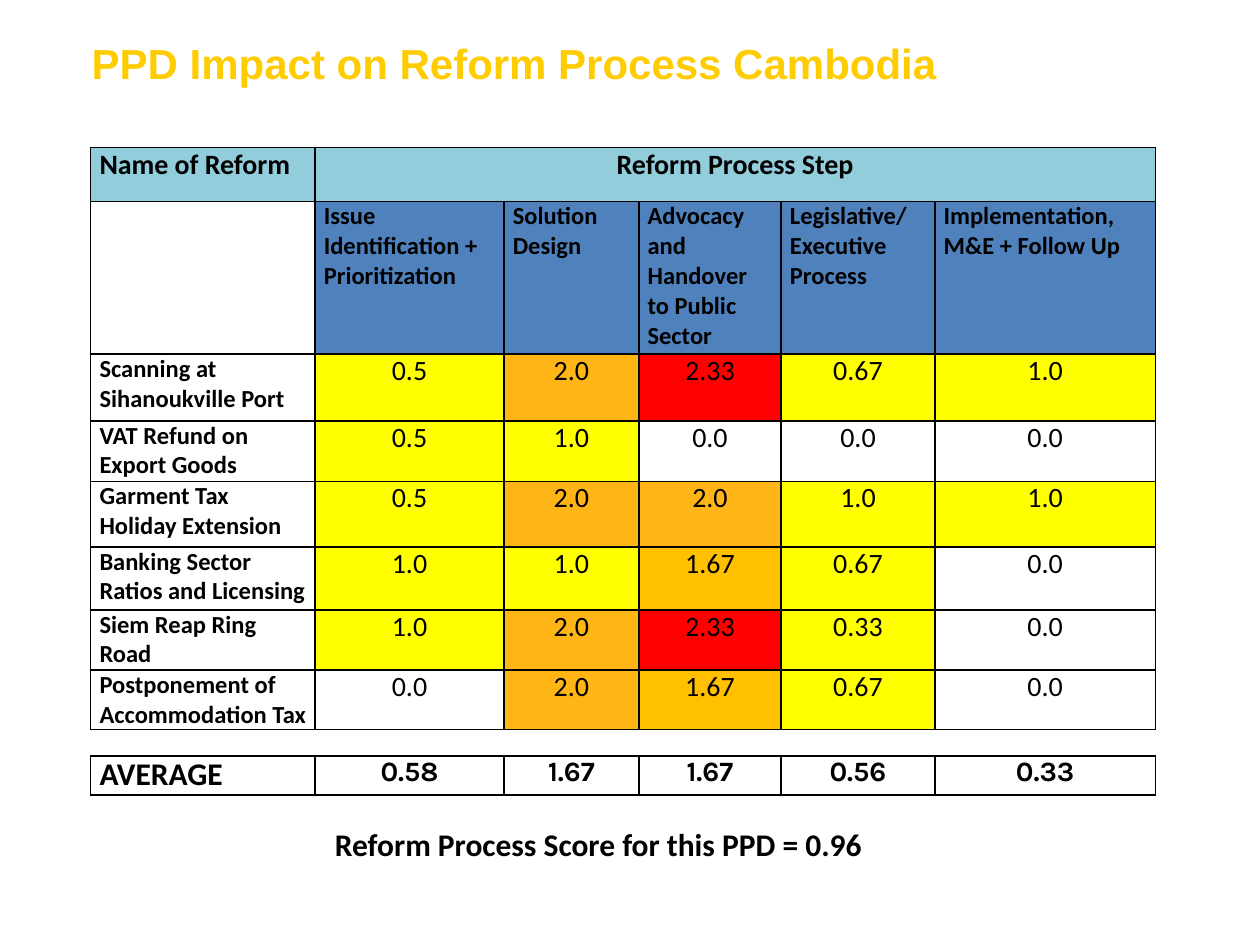
from lxml.etree import SubElement
from pptx import Presentation
from pptx.dml.color import RGBColor
from pptx.enum.text import MSO_AUTO_SIZE, PP_ALIGN
from pptx.oxml.ns import qn
from pptx.util import Inches, Pt

BLACK = RGBColor(0x00, 0x00, 0x00)
GOLD = RGBColor(0xFF, 0xCC, 0x00)
LIGHT_BLUE = RGBColor(0x92, 0xCD, 0xDC)
BLUE = RGBColor(0x4F, 0x81, 0xBD)
YELLOW = RGBColor(0xFF, 0xFF, 0x00)
AMBER = RGBColor(0xFF, 0xC0, 0x00)
ORANGE = RGBColor(0xFE, 0xB5, 0x15)
RED = RGBColor(0xFF, 0x00, 0x00)

TITLE = "PPD Impact on Reform Process Cambodia"
SCORE = "Reform Process Score for this PPD = 0.96"
STEPS = [
    ("Issue Identification + Prioritization", PP_ALIGN.LEFT),
    ("Solution Design", PP_ALIGN.JUSTIFY),
    ("Advocacy and Handover to Public Sector", PP_ALIGN.LEFT),
    ("Legislative/ Executive Process", PP_ALIGN.JUSTIFY),
    ("Implementation, M&E + Follow Up", PP_ALIGN.JUSTIFY),
]
REFORMS = [
    ("Scanning at Sihanoukville Port", ["0.5", "2.0", "2.33", "0.67", "1.0"]),
    ("VAT Refund on Export Goods", ["0.5", "1.0", "0.0", "0.0", "0.0"]),
    ("Garment Tax Holiday Extension", ["0.5", "2.0", "2.0", "1.0", "1.0"]),
    ("Banking Sector Ratios and Licensing", ["1.0", "1.0", "1.67", "0.67", "0.0"]),
    ("Siem Reap Ring Road", ["1.0", "2.0", "2.33", "0.33", "0.0"]),
    ("Postponement of Accommodation Tax", ["0.0", "2.0", "1.67", "0.67", "0.0"]),
]
AVERAGES = ["0.58", "1.67", "1.67", "0.56", "0.33"]
COLUMN_WIDTHS = [1.78, 1.5, 1.07, 1.13, 1.22, 1.75]
ROW_HEIGHTS = [0.43, 1.21, 0.53, 0.48, 0.52, 0.5, 0.48, 0.47, 0.21, 0.31]
FIRST_REFORM_ROW = 2
SPACER_ROW = FIRST_REFORM_ROW + len(REFORMS)
AVERAGE_ROW = SPACER_ROW + 1
SCORE_FILLS = [(0, None), (1, YELLOW), (1.67, AMBER), (2, ORANGE), (3, RED)]


def write_text(frame, text, size=16, bold=True, font="Calibri", color=BLACK, align=PP_ALIGN.LEFT):
    frame.word_wrap = True
    paragraph = frame.paragraphs[0]
    paragraph.alignment = align
    run = paragraph.add_run()
    run.text = text
    run.font.size = Pt(size)
    run.font.bold = bold
    run.font.name = font
    run.font.color.rgb = color


def add_text_box(slide, left, top, width, height, text, **text_format):
    box = slide.shapes.add_textbox(Inches(left), Inches(top), Inches(width), Inches(height))
    write_text(box.text_frame, text, **text_format)
    box.text_frame.auto_size = MSO_AUTO_SIZE.SHAPE_TO_FIT_TEXT


def add_borders(cell, visible_sides):
    properties = cell._tc.get_or_add_tcPr()
    for side in "LRTB":
        line = SubElement(properties, qn(f"a:ln{side}"), w=str(Pt(1)))
        if side in visible_sides:
            fill = SubElement(line, qn("a:solidFill"))
            SubElement(fill, qn("a:srgbClr"), val=str(BLACK))
        else:
            SubElement(line, qn("a:noFill"))


def paint(cell, color):
    if color is None:
        cell.fill.background()
    else:
        cell.fill.solid()
        cell.fill.fore_color.rgb = color


def score_fill(score):
    return next(color for limit, color in SCORE_FILLS if float(score) <= limit)


def add_reform_table(slide):
    frame = slide.shapes.add_table(
        len(ROW_HEIGHTS), len(COLUMN_WIDTHS), Inches(0.72), Inches(1.17),
        Inches(sum(COLUMN_WIDTHS)), Inches(sum(ROW_HEIGHTS)))
    table = frame.table
    table.first_row = False
    table.horz_banding = False
    for column, width in zip(table.columns, COLUMN_WIDTHS):
        column.width = Inches(width)
    for row_index, height in enumerate(ROW_HEIGHTS):
        row = table.rows[row_index]
        row.height = Inches(height)
        for cell in row.cells:
            cell.margin_left = cell.margin_right = Inches(0.07)
            cell.margin_top = cell.margin_bottom = 0
            add_borders(cell, "TB" if row_index == SPACER_ROW else "LRTB")
            paint(cell, None)
            if row_index == SPACER_ROW:
                cell.text_frame.paragraphs[0]._p.get_or_add_endParaRPr().set("sz", "1000")

    def fill_cell(row, column, text, color=None, **text_format):
        cell = table.cell(row, column)
        write_text(cell.text_frame, text, **text_format)
        paint(cell, color)

    last_column = len(COLUMN_WIDTHS) - 1
    table.cell(0, 1).merge(table.cell(0, last_column))
    table.cell(SPACER_ROW, 0).merge(table.cell(SPACER_ROW, last_column))

    fill_cell(0, 0, "Name of Reform", LIGHT_BLUE)
    fill_cell(0, 1, "Reform Process Step", LIGHT_BLUE, align=PP_ALIGN.CENTER)
    for column, (step, align) in enumerate(STEPS, 1):
        fill_cell(1, column, step, BLUE, size=14, align=align)
    for row, (reform, scores) in enumerate(REFORMS, FIRST_REFORM_ROW):
        fill_cell(row, 0, reform, size=14)
        for column, score in enumerate(scores, 1):
            fill_cell(row, column, score, score_fill(score), bold=False, align=PP_ALIGN.CENTER)
    fill_cell(AVERAGE_ROW, 0, "AVERAGE", size=18, align=PP_ALIGN.JUSTIFY)
    for column, average in enumerate(AVERAGES, 1):
        fill_cell(AVERAGE_ROW, column, average, font="Karla", align=PP_ALIGN.CENTER)


def main():
    presentation = Presentation()
    presentation.slide_width = Inches(10)
    presentation.slide_height = Inches(7.5)
    slide = presentation.slides.add_slide(presentation.slide_layouts[6])
    add_text_box(slide, 0.63, 0.25, 8.43, 0.51, TITLE, size=24, font="Arial", color=GOLD)
    add_reform_table(slide)
    add_text_box(slide, 1.75, 6.5, 6, 0.4, SCORE, size=18, align=PP_ALIGN.CENTER)
    presentation.save("out.pptx")


if __name__ == "__main__":
    main()
